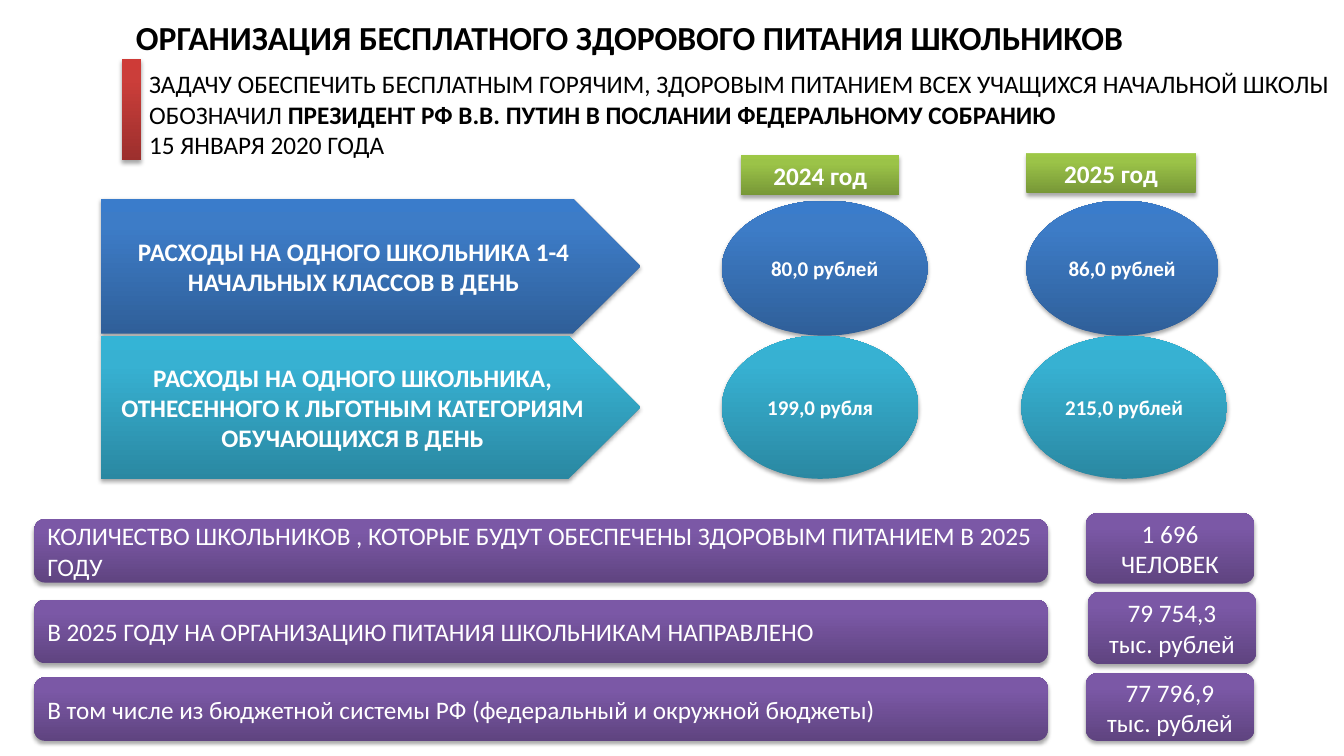
from lxml import etree
from pptx import Presentation
from pptx.dml.color import RGBColor
from pptx.enum.shapes import MSO_SHAPE
from pptx.enum.text import MSO_ANCHOR, PP_ALIGN
from pptx.oxml import parse_xml
from pptx.oxml.ns import qn
from pptx.util import Inches, Pt

ARROW, OVAL = MSO_SHAPE.PENTAGON, MSO_SHAPE.OVAL
RECT, ROUNDED = MSO_SHAPE.RECTANGLE, MSO_SHAPE.ROUNDED_RECTANGLE
LEFT, CENTER = PP_ALIGN.LEFT, PP_ALIGN.CENTER
TOP, MIDDLE = MSO_ANCHOR.TOP, MSO_ANCHOR.MIDDLE
FONT = "Calibri"
COLORS = {"white": "FFFFFF", "black": "000000"}
# Gradient stops at 0, 80 and 100 percent, from the bottom up
GRADIENTS = {
    "blue": ("2F5F99", "3D7CC7", "3A7CCB"),
    "teal": ("2A88A2", "37B1D2", "34B4D6"),
    "green": ("779737", "9BC348", "9DC746"),
    "purple": ("5F4480", "7B58A6", "7C57A8"),
    "red": ("9C2F2D", "CB3E3A", "CE3B37"),
}

# Content: a paragraph is a list of (text, bold) runs
TITLE = "ОРГАНИЗАЦИЯ БЕСПЛАТНОГО ЗДОРОВОГО ПИТАНИЯ ШКОЛЬНИКОВ"
INTRO = [
    [("ЗАДАЧУ ОБЕСПЕЧИТЬ БЕСПЛАТНЫМ ГОРЯЧИМ, ЗДОРОВЫМ ПИТАНИЕМ ВСЕХ УЧАЩИХСЯ "
      "НАЧАЛЬНОЙ ШКОЛЫ ОБОЗНАЧИЛ ", False),
     ("ПРЕЗИДЕНТ РФ В.В. ПУТИН В ПОСЛАНИИ ФЕДЕРАЛЬНОМУ СОБРАНИЮ", True)],
    [("15 ЯНВАРЯ 2020 ГОДА", False)],
]
# Year, left, top, width
YEARS = [("2024 год", 7.35, 1.54, 1.57), ("2025 год", 10.18, 1.52, 1.68)]
# Label, colour, top, height, then cost ovals as (text, left, width)
COSTS = [
    ("РАСХОДЫ НА ОДНОГО ШКОЛЬНИКА 1-4 НАЧАЛЬНЫХ КЛАССОВ В ДЕНЬ", "blue", 1.97, 1.34,
     [("80,0 рублей", 7.16, 2.04), ("86,0 рублей", 10.18, 1.9)]),
    ("РАСХОДЫ НА ОДНОГО ШКОЛЬНИКА, ОТНЕСЕННОГО К ЛЬГОТНЫМ КАТЕГОРИЯМ ОБУЧАЮЩИХСЯ В ДЕНЬ",
     "teal", 3.33, 1.42,
     [("199,0 рубля", 7.16, 1.95), ("215,0 рублей", 10.13, 2.04)]),
]
# Label, top, value lines, then value left, top, height
TOTALS = [
    ("КОЛИЧЕСТВО ШКОЛЬНИКОВ , КОТОРЫЕ БУДУТ ОБЕСПЕЧЕНЫ ЗДОРОВЫМ ПИТАНИЕМ В 2025 ГОДУ",
     5.15, ["1 696 ЧЕЛОВЕК"], 10.77, 5.09, 0.7),
    ("В 2025 ГОДУ НА ОРГАНИЗАЦИЮ ПИТАНИЯ ШКОЛЬНИКАМ НАПРАВЛЕНО",
     5.95, ["79 754,3", "тыс. рублей"], 10.79, 5.87, 0.72),
    ("В том числе из бюджетной системы РФ (федеральный и окружной бюджеты)",
     6.72, ["77 796,9", "тыс. рублей"], 10.77, 6.68, 0.67),
]

prs = Presentation()
prs.slide_width, prs.slide_height = Inches(13.33), Inches(7.5)
slide = prs.slides.add_slide(prs.slide_layouts[6])


def lines(*texts, bold=False):
    return [[(text, bold)] for text in texts]


def write(shape, paragraphs, size=18, color="white", align=CENTER, anchor=MIDDLE,
          inset=(0.1, 0.05)):
    frame = shape.text_frame
    frame.word_wrap = True
    frame.vertical_anchor = anchor
    frame.margin_left = frame.margin_right = Inches(inset[0])
    frame.margin_top = frame.margin_bottom = Inches(inset[1])
    for index, runs in enumerate(paragraphs):
        paragraph = frame.add_paragraph() if index else frame.paragraphs[0]
        paragraph.alignment = align
        for text, bold in runs:
            run = paragraph.add_run()
            run.text = text
            run.font.name, run.font.size, run.font.bold = FONT, Pt(size), bold
            run.font.color.rgb = RGBColor.from_string(COLORS[color])


def add_block(kind, left, top, width, height):
    block = slide.shapes.add_shape(kind, *map(Inches, (left, top, width, height)))
    block.line.fill.background()
    block.shadow.inherit = False
    return block


def add_glossy(kind, gradient, *box):
    """Add a block with a vertical gradient and a soft shadow below it."""
    block = add_block(kind, *box)
    stops = "".join(f'<a:gs pos="{pos}000"><a:srgbClr val="{color}"/></a:gs>'
                    for pos, color in zip((0, 80, 100), GRADIENTS[gradient]))
    properties = block.element.spPr
    properties.find(qn("a:ln")).addprevious(parse_xml(
        '<a:gradFill xmlns:a="http://schemas.openxmlformats.org/drawingml/2006/main" '
        f'rotWithShape="1"><a:gsLst>{stops}</a:gsLst>'
        '<a:lin ang="16200000" scaled="0"/></a:gradFill>'))
    shadow = etree.SubElement(
        properties.find(qn("a:effectLst")), qn("a:outerShdw"), blurRad=str(Pt(3.1)),
        dist=str(Pt(1.8)), dir="5400000", rotWithShape="0")
    tint = etree.SubElement(shadow, qn("a:srgbClr"), val=COLORS["black"])
    etree.SubElement(tint, qn("a:alpha"), val="35000")
    return block


# Title
heading = slide.shapes.add_textbox(Inches(1.25), 0, Inches(12), Inches(0.73))
write(heading, lines(TITLE, bold=True), size=24, color="black", align=LEFT)

# Daily cost per pupil
for label, gradient, top, height, ovals in COSTS:
    arrow = add_glossy(ARROW, gradient, 1, top, 5.35, height)
    write(arrow, lines(label, bold=True))
    for cost, left, width in ovals:
        oval = add_glossy(OVAL, gradient, left, 3.33 if top > 3 else 1.99, width, height)
        write(oval, lines(cost, bold=True), size=15)

# Year tags
for year, left, top, width in YEARS:
    tag = add_glossy(RECT, "green", left, top, width, 0.4)
    write(tag, lines(year, bold=True), anchor=TOP)

# Introduction with its red marker
intro = add_block(RECT, 1.4, 0.74, 11.89, 0.78)
intro.fill.solid()
intro.fill.fore_color.rgb = RGBColor.from_string(COLORS["white"])
write(intro, INTRO, color="black", align=LEFT, inset=(0.08, 0.04))
add_glossy(RECT, "red", 1.21, 0.59, 0.19, 1)

# Totals
for label, top, amount, amount_left, amount_top, amount_height in TOTALS:
    bar = add_glossy(ROUNDED, "purple", 0.34, top, 10.05, 0.63)
    write(bar, lines(label), align=LEFT)
    value = add_glossy(ROUNDED, "purple", amount_left, amount_top, 1.67, amount_height)
    write(value, lines(*amount))

prs.save("out.pptx")
